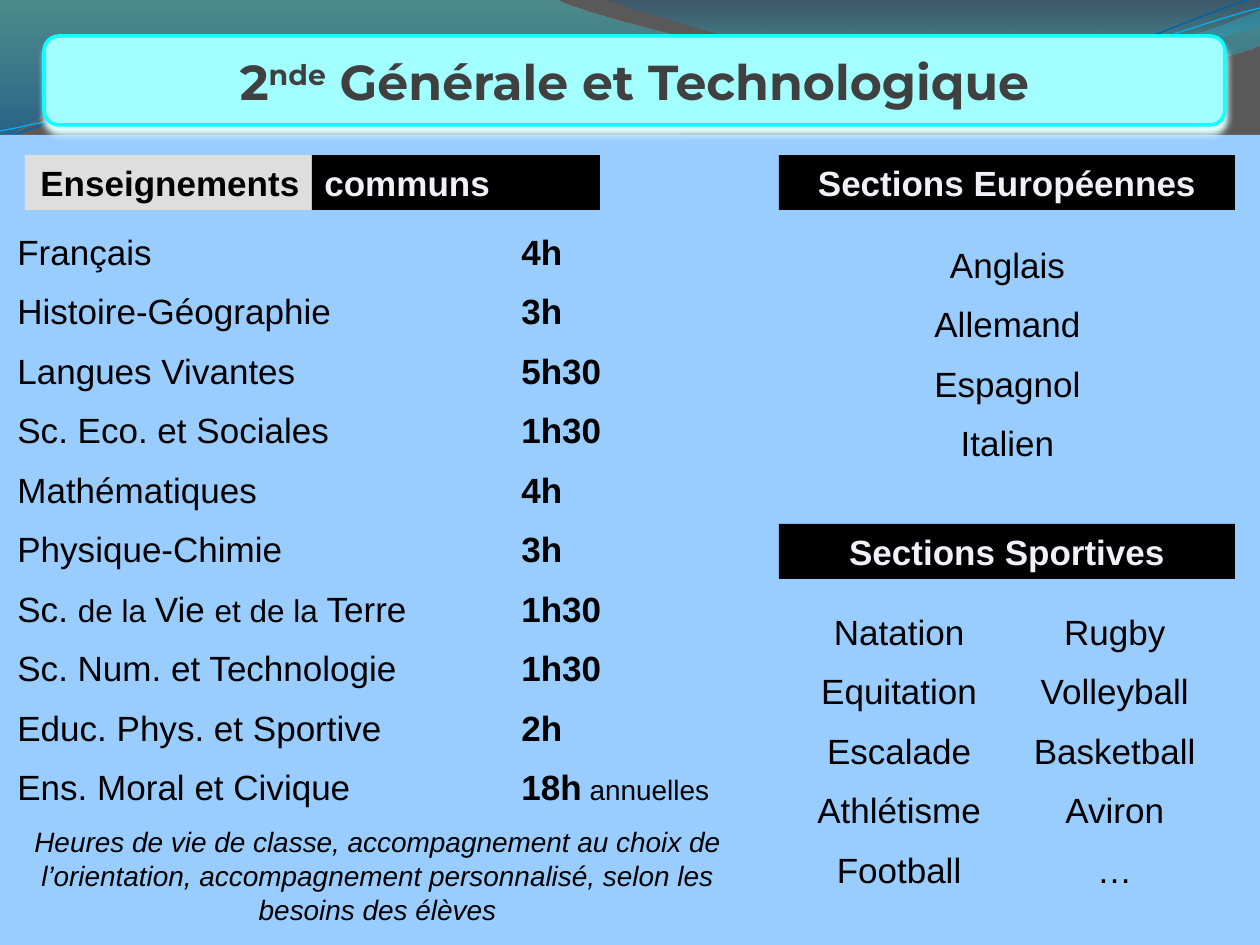
from dataclasses import dataclass

from lxml.etree import SubElement
from pptx import Presentation
from pptx.dml.color import RGBColor
from pptx.enum.shapes import MSO_SHAPE
from pptx.enum.text import MSO_ANCHOR, PP_ALIGN
from pptx.oxml.ns import qn
from pptx.util import Emu, Pt

EMU_PER_PX = 914400 / 126
SLIDE_WIDTH, SLIDE_HEIGHT = 1260, 945
HOURS_TAB = 504
BLACK, PALE = "000000", "EFF1F7"


@dataclass(frozen=True)
class Box:
    left: int
    top: int
    width: int
    height: int


@dataclass(frozen=True)
class Run:
    text: str
    size: int | None = None
    bold: bool | None = None
    baseline: int | None = None


@dataclass(frozen=True)
class Line:
    runs: tuple[Run, ...]
    size: int = 20
    color: str = BLACK
    align: PP_ALIGN = PP_ALIGN.CENTER
    bold: bool | None = None
    italic: bool | None = None
    font: str = "Arial"
    tab: int | None = None


@dataclass(frozen=True)
class Stop:
    color: str
    position: float
    opacity: int


@dataclass(frozen=True)
class Wave:
    segments: tuple[tuple[tuple[int, int], ...], ...]
    stops: tuple[Stop, ...] = ()
    color: str = ""
    width: float = 0


@dataclass(frozen=True)
class Header:
    box: Box
    text: str
    fill: str = BLACK
    color: str = PALE
    align: PP_ALIGN = PP_ALIGN.CENTER


WAVES = (
    Wave((((0, -1),), ((554, -1),),
          ((600, 21), (837, 79), (955, 79)), ((1075, 79), (1207, 33), (1260, 11)),
          ((1261, 45),),
          ((1239, 55), (1096, 96), (940, 95)), ((784, 94), (481, 35), (324, 43)),
          ((163, 44), (58, 105), (-1, 142))),
         stops=(Stop("40C8C8", 0, 45), Stop("0066AE", 1, 55))),
    Wave((((604, -1),), ((641, 14), (859, 78), (969, 82)),
          ((1079, 87), (1211, 40), (1260, 26)), ((1260, 0),)),
         stops=(Stop("00538E", 0, 30), Stop("3FFCFC", 0.8, 45))),
    Wave((((0, 140),), ((60, 117), (199, 72), (349, 66)),
          ((498, 59), (747, 112), (898, 101)), ((1050, 89), (1182, 19), (1257, -3))),
         color="0063A9", width=0.85),
    Wave((((0, 131),), ((59, 121), (207, 77), (357, 71)),
          ((508, 64), (752, 105), (903, 95)), ((1053, 84), (1186, 26), (1260, 8))),
         color="00B0F0", width=0.75),
)

COMMON_HEADERS = (
    Header(Box(25, 155, 287, 55), "Enseignements", "DEDEDE", BLACK, PP_ALIGN.RIGHT),
    Header(Box(312, 155, 288, 55), "communs", align=PP_ALIGN.LEFT),
)
SECTION_HEADERS = (
    Header(Box(779, 155, 456, 55), "Sections Européennes"),
    Header(Box(779, 524, 456, 55), "Sections Sportives"),
)

LIFE_SCIENCE = (Run("Sc. "), Run("de la ", 18), Run("Vie "), Run("et de la ", 18), Run("Terre"))
COURSES = (
    ((Run("Français"),), "4h"),
    ((Run("Histoire-Géographie"),), "3h"),
    ((Run("Langues Vivantes"),), "5h30"),
    ((Run("Sc. Eco. et Sociales"),), "1h30"),
    ((Run("Mathématiques"),), "4h"),
    ((Run("Physique-Chimie"),), "3h"),
    (LIFE_SCIENCE, "1h30"),
    ((Run("Sc. Num. et Technologie"),), "1h30"),
    ((Run("Educ. Phys. et Sportive"),), "2h"),
    ((Run("Ens. Moral et Civique"),), "18h"),
)
SUPPORT_NOTE = ("Heures de vie de classe, accompagnement au choix de l’orientation, "
                "accompagnement personnalisé, selon les besoins des élèves")
LANGUAGES = ("Anglais", "Allemand", "Espagnol", "Italien")
SPORTS = ("Natation", "Equitation", "Escalade", "Athlétisme", "Football",
          "Rugby", "Volleyball", "Basketball", "Aviron", "…")


def px(value: float) -> Emu:
    return Emu(round(value * EMU_PER_PX))


def rgb(color: str) -> RGBColor:
    return RGBColor.from_string(color)


def place(box: Box) -> tuple[Emu, ...]:
    return px(box.left), px(box.top), px(box.width), px(box.height)


def bend_curves(shape, segments) -> None:
    outline = next(shape._element.iter(qn("a:path")))
    edges = iter(outline.findall(qn("a:lnTo")))
    for segment in segments[1:]:
        members = [next(edges) for _ in segment]
        if len(members) == 3:
            curve = SubElement(outline, qn("a:cubicBezTo"))
            members[0].addprevious(curve)
            for member in members:
                curve.append(member[0])
                outline.remove(member)


def draw_wave(slide, wave: Wave) -> None:
    points = [(px(x), px(y)) for segment in wave.segments for x, y in segment]
    builder = slide.shapes.build_freeform(*points[0])
    builder.add_line_segments(points[1:], close=bool(wave.stops))
    shape = builder.convert_to_shape()
    bend_curves(shape, wave.segments)
    shape.shadow.inherit = False
    if not wave.stops:
        shape.fill.background()
        shape.line.color.rgb = rgb(wave.color)
        shape.line.width = Pt(wave.width)
        return
    shape.line.fill.background()
    shape.fill.gradient()
    shape.fill.gradient_angle = 270
    for target, stop in zip(shape.fill.gradient_stops, wave.stops):
        target.color.rgb = rgb(stop.color)
        target.position = stop.position
    for color, stop in zip(shape._element.spPr.iter(qn("a:srgbClr")), wave.stops):
        SubElement(color, qn("a:alpha"), val=str(stop.opacity * 1000))


def draw_panel(shapes, box: Box, fill: str, kind=MSO_SHAPE.RECTANGLE):
    shape = shapes.add_shape(kind, *place(box))
    shape.shadow.inherit = False
    shape.fill.solid()
    shape.fill.fore_color.rgb = rgb(fill)
    shape.line.fill.background()
    return shape


def write_lines(frame, lines: list[Line], anchor=MSO_ANCHOR.TOP) -> None:
    frame.word_wrap = True
    frame.vertical_anchor = anchor
    for index, line in enumerate(lines):
        paragraph = frame.add_paragraph() if index else frame.paragraphs[0]
        paragraph.alignment = line.align
        if index:
            paragraph.space_before = Pt(5)
        paragraph.space_after = Pt(5)
        if line.tab:
            tabs = SubElement(paragraph._p.get_or_add_pPr(), qn("a:tabLst"))
            SubElement(tabs, qn("a:tab"), pos=str(px(line.tab)), algn="l")
        font = paragraph.font
        font.name, font.size = line.font, Pt(line.size)
        font.bold, font.italic = line.bold, line.italic
        font.color.rgb = rgb(line.color)
        for part in line.runs:
            run = paragraph.add_run()
            run.text = part.text
            if part.size:
                run.font.size = Pt(part.size)
            if part.bold:
                run.font.bold = True
            if part.baseline:
                run._r.get_or_add_rPr().set("baseline", str(part.baseline * 1000))


def draw_text(slide, box: Box, lines: list[Line], columns: int = 1) -> None:
    frame = slide.shapes.add_textbox(*place(box)).text_frame
    write_lines(frame, lines)
    if columns > 1:
        frame._txBody.bodyPr.set("numCol", str(columns))


def draw_headers(shapes, headers: tuple[Header, ...]) -> None:
    for header in headers:
        panel = draw_panel(shapes, header.box, header.fill)
        label = Line((Run(header.text),), color=header.color, align=header.align, bold=True)
        write_lines(panel.text_frame, [label])


def draw_title(slide) -> None:
    shape = draw_panel(slide.shapes, Box(44, 36, 1181, 89), "A3FFFF", MSO_SHAPE.ROUNDED_RECTANGLE)
    shape.line.color.rgb = rgb("0DFFFF")
    shape.line.width = Pt(2)
    effects = shape._element.spPr.find(qn("a:effectLst"))
    shadow = SubElement(effects, qn("a:outerShdw"), blurRad=str(Pt(4)), dist=str(Pt(4)),
                        dir="5400000", rotWithShape="0")
    SubElement(shadow, qn("a:srgbClr"), val="E0FFFF")
    runs = (Run("2"), Run("nde", baseline=30), Run(" Générale et Technologique"))
    title = Line(runs, 28, "404040", bold=True, font="Montserrat")
    write_lines(shape.text_frame, [title], MSO_ANCHOR.MIDDLE)
    shape.text_frame.paragraphs[0].space_after = Pt(0)


def course_lines() -> list[Line]:
    lines = []
    for name, hours in COURSES:
        suffix = (Run(" annuelles", 16),) if hours == "18h" else ()
        runs = (*name, Run("\t"), Run(hours, bold=True), *suffix)
        lines.append(Line(runs, align=PP_ALIGN.LEFT, tab=HOURS_TAB))
    return lines + [Line((Run(SUPPORT_NOTE),), 16, italic=True)]


def main() -> None:
    presentation = Presentation()
    presentation.slide_width, presentation.slide_height = px(SLIDE_WIDTH), px(SLIDE_HEIGHT)
    slide = presentation.slides.add_slide(presentation.slide_layouts[6])
    slide.background.fill.solid()
    slide.background.fill.fore_color.rgb = rgb("595959")
    for wave in WAVES:
        draw_wave(slide, wave)
    draw_panel(slide.shapes, Box(0, 135, SLIDE_WIDTH, 810), "99CCFF")
    draw_title(slide)
    draw_text(slide, Box(5, 224, 745, 714), course_lines())
    draw_headers(slide.shapes, SECTION_HEADERS)
    draw_text(slide, Box(780, 237, 455, 236), [Line((Run(name),)) for name in LANGUAGES])
    draw_headers(slide.shapes.add_group_shape().shapes, COMMON_HEADERS)
    draw_text(slide, Box(779, 604, 456, 305), [Line((Run(name),)) for name in SPORTS], 2)
    presentation.save("out.pptx")


if __name__ == "__main__":
    main()
